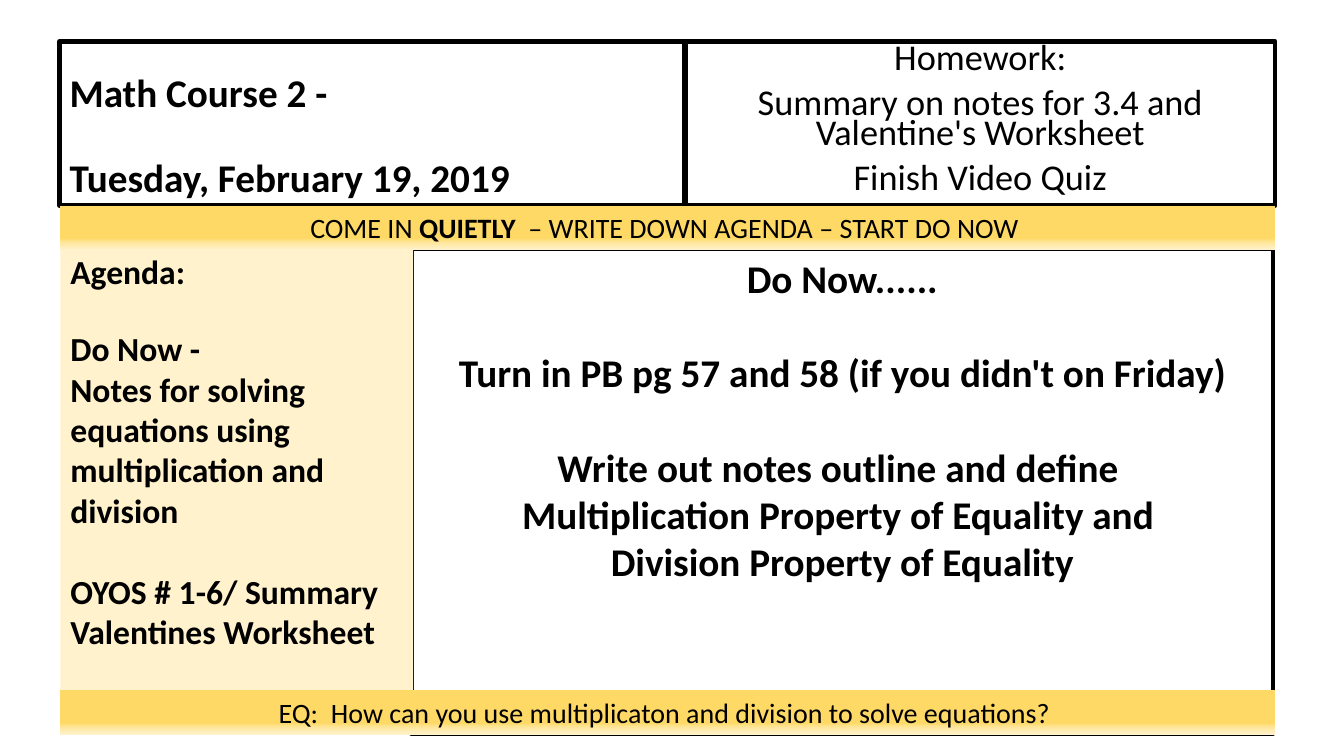
"""Build the daily maths agenda slide with homework, do-now task and essential question."""
from dataclasses import dataclass

from lxml.etree import SubElement
from pptx import Presentation
from pptx.dml.color import RGBColor
from pptx.enum.shapes import MSO_SHAPE
from pptx.enum.text import MSO_ANCHOR as Anchor, MSO_AUTO_SIZE as AutoSize, PP_ALIGN as Align
from pptx.oxml.ns import qn
from pptx.shapes.autoshape import Shape
from pptx.util import Pt

BLACK = RGBColor(0x00, 0x00, 0x00)
WHITE = RGBColor(0xFF, 0xFF, 0xFF)
GOLD = RGBColor(0xFF, 0xD9, 0x66)
SAND = RGBColor(0xFF, 0xE6, 0x99)
CREAM = RGBColor(0xFF, 0xF2, 0xCC)
BANNER_STOPS = ((0, GOLD), (74, GOLD), (83, SAND), (100, CREAM))
FONT = "Calibri"


@dataclass(frozen=True)
class Line:
    text: str
    before: float = 0
    spacing: float = 1
    strong: str = ""


@dataclass(frozen=True)
class Panel:
    left: float
    top: float
    width: float
    height: float
    size: float
    lines: tuple[Line, ...]
    bold: bool = False
    align: Align = Align.CENTER
    anchor: Anchor = Anchor.TOP
    fill: RGBColor | None = None
    outlined: bool = False
    banner: bool = False


TITLE = Panel(42.5, 29.5, 446.5, 117.4, 28, (
    Line("Math Course 2 -", spacing=0.9),
    Line("Tuesday, February 19, 2019", before=30, spacing=0.9),
), bold=True, align=Align.LEFT, anchor=Anchor.BOTTOM, outlined=True)

HOMEWORK = Panel(489.6, 29.5, 421.2, 117.4, 25.9, tuple(
    Line(text, before=10, spacing=0.7) for text in (
        "Homework:",
        "Summary on notes for 3.4 and Valentine's Worksheet",
        "Finish Video Quiz",
    )), outlined=True)

BODY_PANELS = (
    Panel(293.8, 177.8, 615.6, 346.3, 28, (
        Line("Do Now......"),
        Line("Turn in PB pg 57 and 58 (if you didn't on Friday)", before=34),
        Line("Write out notes outline and define ", before=34),
        Line("Multiplication Property of Equality and "),
        Line("Division Property of Equality"),
    ), bold=True, fill=WHITE, outlined=True),
    Panel(42.8, 146.9, 868.3, 31.5, 20, (
        Line("COME IN QUIETLY  – WRITE DOWN AGENDA – START DO NOW ", strong="QUIETLY"),
    ), banner=True),
    Panel(43.2, 178.6, 252, 321.1, 24, (
        Line("Agenda:", spacing=0.9),
        Line("Do Now -", before=26.4),
        Line("Notes for solving equations using multiplication and division"),
        Line("OYOS # 1-6/ Summary", before=29.3),
        Line("Valentines Worksheet"),
    ), bold=True, align=Align.LEFT, fill=CREAM),
    Panel(42.8, 493.2, 868.3, 31.5, 20, (
        Line("EQ:  How can you use multiplicaton and division to solve equations? "),
    ), banner=True),
)


def paint_banner(box: Shape) -> None:
    box.fill.gradient()
    box.fill.gradient_angle = 270
    stops = box.element.spPr.find(qn("a:gradFill")).find(qn("a:gsLst"))
    for stop in list(stops):
        stops.remove(stop)
    for percent, colour in BANNER_STOPS:
        stop = SubElement(stops, qn("a:gs"), pos=str(percent * 1000))
        SubElement(stop, qn("a:srgbClr"), val=str(colour))


def write_lines(box: Shape, panel: Panel) -> None:
    frame = box.text_frame
    frame.text = "\n".join(line.text for line in panel.lines)
    frame.word_wrap = True
    frame.auto_size = AutoSize.NONE
    frame.vertical_anchor = panel.anchor
    for para, line in zip(frame.paragraphs, panel.lines):
        para.alignment = panel.align
        para.line_spacing = line.spacing
        para.space_before = Pt(line.before)
        if line.strong:
            start, strong, rest = line.text.partition(line.strong)
            para.text = start
            for text in (strong, rest):
                para.add_run().text = text
        for span in para.runs:
            span.font.name = FONT
            span.font.size = Pt(panel.size)
            span.font.bold = panel.bold or span.text == line.strong
            span.font.color.rgb = BLACK


def format_panel(box: Shape, panel: Panel) -> None:
    box.left, box.top = Pt(panel.left), Pt(panel.top)
    box.width, box.height = Pt(panel.width), Pt(panel.height)
    box.shadow.inherit = False
    if panel.banner:
        paint_banner(box)
    elif panel.fill is not None:
        box.fill.solid()
        box.fill.fore_color.rgb = panel.fill
    if panel.outlined:
        box.line.color.rgb = BLACK
        box.line.width = Pt(3.25)
    else:
        box.line.fill.background()
    write_lines(box, panel)


def main() -> None:
    deck = Presentation()
    deck.slide_width, deck.slide_height = Pt(960), Pt(540)
    page = deck.slides.add_slide(deck.slide_layouts[0])
    format_panel(page.shapes.title, TITLE)
    format_panel(page.placeholders[1], HOMEWORK)
    for panel in BODY_PANELS:
        box = page.shapes.add_shape(MSO_SHAPE.RECTANGLE, 0, 0, 0, 0)
        format_panel(box, panel)
    deck.save("out.pptx")


if __name__ == "__main__":
    main()
